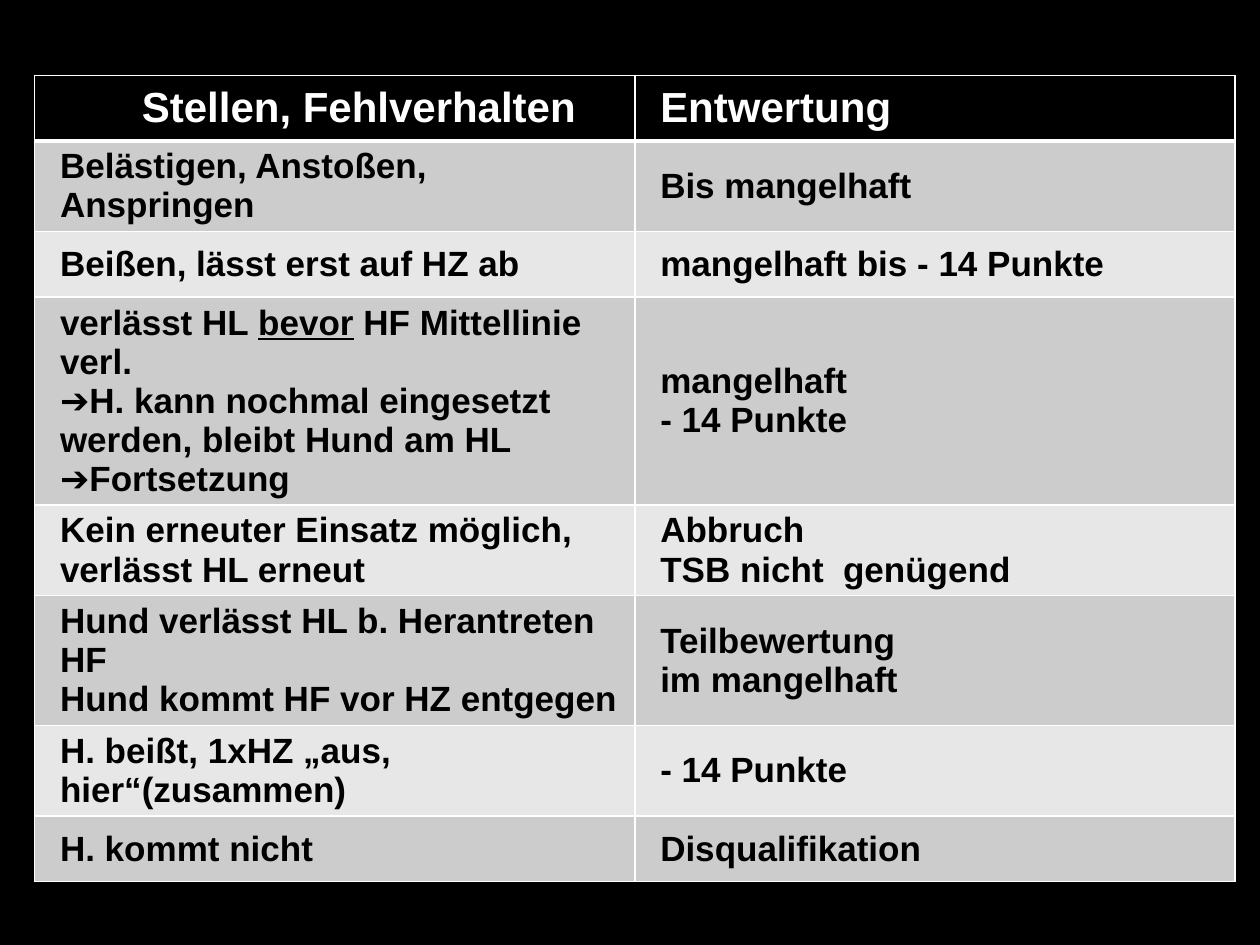
import pptx
import pptx.util
import pptx.dml.color
import pptx.enum.text
import lxml.etree
from pptx.util import Cm

HEAD = ("Stellen, Fehlverhalten", "Entwertung")
RULES = [
    (["Belästigen, Anstoßen, Anspringen"], ["Bis mangelhaft"]),
    (["Beißen, lässt erst auf HZ ab"], ["mangelhaft bis - 14 Punkte"]),
    (
        [
            ("verlässt HL ", "bevor", " HF Mittellinie verl."),
            "➔H. kann nochmal eingesetzt werden, bleibt Hund am HL ➔Fortsetzung",
        ],
        ["mangelhaft", "- 14 Punkte"],
    ),
    (
        ["Kein erneuter Einsatz möglich,", "verlässt HL erneut"],
        ["Abbruch", "TSB nicht  genügend"],
    ),
    (
        ["Hund verlässt HL b. Herantreten HF", "Hund kommt HF vor HZ entgegen"],
        ["Teilbewertung", "im mangelhaft"],
    ),
    (["H. beißt, 1xHZ „aus, hier“(zusammen)"], ["- 14 Punkte"]),
    (["H. kommt nicht"], ["Disqualifikation"]),
]
THEME = {
    "font": "Arial",
    "dark": "000000",
    "light": "FFFFFF",
    "bands": ("CCCCCC", "E7E7E7"),
    "head": 24,
    "body": 20,
    "thin": 1,
    "thick": 3,
}
LEFT, TOP, WIDE, HIGH = Cm(0.7), Cm(1.52), Cm(12.1), Cm(1.32)
PAD, INDENT = Cm(0.51), Cm(1.65)


def tint(code):
    return pptx.dml.color.RGBColor.from_string(code)


def paint(fill, code):
    fill.solid()
    fill.fore_color.rgb = tint(code)


def edge(cell, row):
    props = cell._tc.get_or_add_tcPr()
    space = "{http://schemas.openxmlformats.org/drawingml/2006/main}"
    for side in "LRTB":
        heavy = (row, side) in ((0, "B"), (1, "T"))
        size = THEME["thick" if heavy else "thin"]
        line = lxml.etree.SubElement(
            props, f"{space}ln{side}", w=str(pptx.util.Pt(size))
        )
        fill = lxml.etree.SubElement(line, f"{space}solidFill")
        lxml.etree.SubElement(fill, f"{space}srgbClr", val=THEME["light"])


def write(cell, lines, size, color):
    frame = cell.text_frame
    for i, line in enumerate(lines):
        para = frame.add_paragraph() if i else frame.paragraphs[0]
        parts = (line,) if isinstance(line, str) else line
        for j, part in enumerate(parts):
            run = para.add_run()
            run.text = part
            if j == 1:
                run.font.underline = True
        font = para.font
        font.name, font.size, font.bold = THEME["font"], pptx.util.Pt(size), True
        font.color.rgb = tint(color)


deck = pptx.Presentation()
deck.slide_width, deck.slide_height = Cm(25.4), Cm(19.05)
slide = deck.slides.add_slide(deck.slide_layouts[6])
paint(slide.background.fill, THEME["dark"])

rows = [tuple([text] for text in HEAD)] + RULES
count = len(rows)
table = slide.shapes.add_table(
    count, len(HEAD), LEFT, TOP, WIDE * len(HEAD), HIGH * count
).table
for r, row in enumerate(rows):
    for c, lines in enumerate(row):
        cell = table.cell(r, c)
        cell.margin_left = PAD + (INDENT if r == c == 0 else 0)
        cell.vertical_anchor = pptx.enum.text.MSO_ANCHOR.MIDDLE
        edge(cell, r)
        if r == 0:
            paint(cell.fill, THEME["dark"])
            write(cell, lines, THEME["head"], THEME["light"])
        else:
            paint(cell.fill, THEME["bands"][(r - 1) % 2])
            write(cell, lines, THEME["body"], THEME["dark"])

deck.save("out.pptx")
